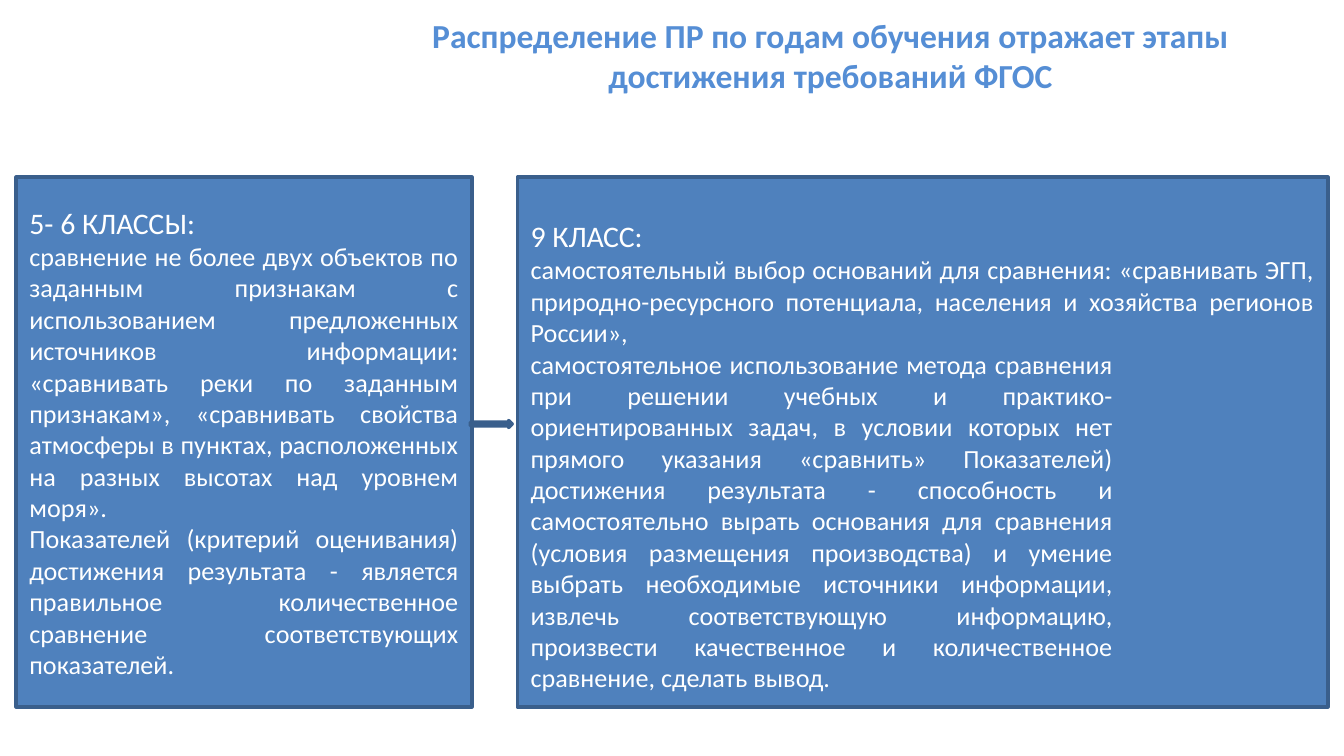
from dataclasses import dataclass

from pptx import Presentation
from pptx.dml.color import RGBColor
from pptx.enum.shapes import MSO_SHAPE
from pptx.enum.text import MSO_ANCHOR, PP_ALIGN
from pptx.util import Inches, Pt

RECT, ARROW = MSO_SHAPE.RECTANGLE, MSO_SHAPE.RIGHT_ARROW
TOP, MIDDLE = MSO_ANCHOR.TOP, MSO_ANCHOR.MIDDLE
CENTER, JUSTIFY = PP_ALIGN.CENTER, PP_ALIGN.JUSTIFY


@dataclass(frozen=True)
class Theme:
    """Colours, font and type sizes of the slide."""
    font: str = "Calibri"
    title: RGBColor = RGBColor(0x55, 0x8E, 0xD5)
    fill: RGBColor = RGBColor(0x4F, 0x81, 0xBD)
    line: RGBColor = RGBColor(0x3A, 0x5F, 0x8C)
    text: RGBColor = RGBColor(0xFF, 0xFF, 0xFF)
    title_size: int = 18
    head_size: int = 16
    body_size: int = 14
    line_width: int = 2


THEME = Theme()

TITLE = "Распределение ПР по годам обучения отражает этапы достижения требований ФГОС"
JUNIOR_HEAD = "5- 6 КЛАССЫ:"
JUNIOR_BODY = [
    "сравнение не более двух объектов по заданным признакам с использованием "
    "предложенных источников информации: «сравнивать реки по заданным признакам», "
    "«сравнивать свойства атмосферы в пунктах, расположенных на разных высотах "
    "над уровнем моря».",
    "Показателей (критерий оценивания) достижения результата - является правильное "
    "количественное сравнение соответствующих показателей.",
]
SENIOR_HEAD = "9 КЛАСС:"
SENIOR_BODY = [
    "самостоятельный выбор оснований для сравнения: «сравнивать ЭГП, "
    "природно-ресурсного потенциала, населения и хозяйства регионов России»,",
]
SENIOR_METHOD = (
    "самостоятельное использование метода сравнения при решении учебных и "
    "практико-ориентированных задач, в условии которых нет прямого указания "
    "«сравнить» Показателей) достижения результата - способность и самостоятельно "
    "вырать основания для сравнения (условия размещения производства) и умение "
    "выбрать необходимые источники информации, извлечь соответствующую информацию, "
    "произвести качественное и количественное сравнение, сделать вывод."
)


def write(tf, items, color, align, bold=False):
    """Write (text, size) items as paragraphs of a text frame."""
    tf.word_wrap = True
    for i, (text, size) in enumerate(items):
        p = tf.add_paragraph() if i else tf.paragraphs[0]
        p.alignment = align
        r = p.add_run()
        r.text = text
        r.font.name = THEME.font
        r.font.size = Pt(size)
        r.font.bold = bold
        r.font.color.rgb = color


def add_filled(slide, kind, x, y, w, h):
    """Add a filled and outlined shape without a shadow."""
    sp = slide.shapes.add_shape(kind, Inches(x), Inches(y), Inches(w), Inches(h))
    sp.shadow.inherit = False
    sp.fill.solid()
    sp.fill.fore_color.rgb = THEME.fill
    sp.line.color.rgb = THEME.line
    sp.line.width = Pt(THEME.line_width)
    return sp


def add_title(slide, x, y, w, h):
    """Place and fill the title placeholder."""
    sp = slide.shapes.title
    sp.left, sp.top, sp.width, sp.height = map(Inches, (x, y, w, h))
    sp.text_frame.vertical_anchor = MIDDLE
    write(sp.text_frame, [(TITLE, THEME.title_size)], THEME.title, CENTER, True)


def add_panel(slide, x, y, w, h, head, body, anchor=MIDDLE, inset=0.05):
    """Add a class panel with a heading and justified paragraphs."""
    tf = add_filled(slide, RECT, x, y, w, h).text_frame
    tf.vertical_anchor = anchor
    tf.margin_top = Inches(inset)
    items = [(head, THEME.head_size)] + [(text, THEME.body_size) for text in body]
    write(tf, items, THEME.text, JUSTIFY)


def add_senior(slide, x, y, w, h):
    """Add the ninth-class panel with its narrower method text."""
    add_panel(slide, x, y, w, h, SENIOR_HEAD, SENIOR_BODY, TOP, 0.3)
    tb = slide.shapes.add_textbox(Inches(x), Inches(y + 1.22), Inches(w - 1.5), Inches(2.93))
    write(tb.text_frame, [(SENIOR_METHOD, THEME.body_size)], THEME.text, JUSTIFY)


def main():
    """Build and save the slide."""
    prs = Presentation()
    prs.slide_width = Inches(10)
    prs.slide_height = prs.slide_width * 9 // 16
    slide = prs.slides.add_slide(prs.slide_layouts[5])
    top, height = 1.32, 3.94
    add_title(slide, 2.56, -0.1, 7.24, 1.02)
    add_panel(slide, 0.12, top, 3.39, height, JUNIOR_HEAD, JUNIOR_BODY)
    add_senior(slide, 3.85, top, 6.03, height)
    add_filled(slide, ARROW, 3.5, 3.13, 0.31, 0.05)
    prs.save("out.pptx")


if __name__ == "__main__":
    main()
